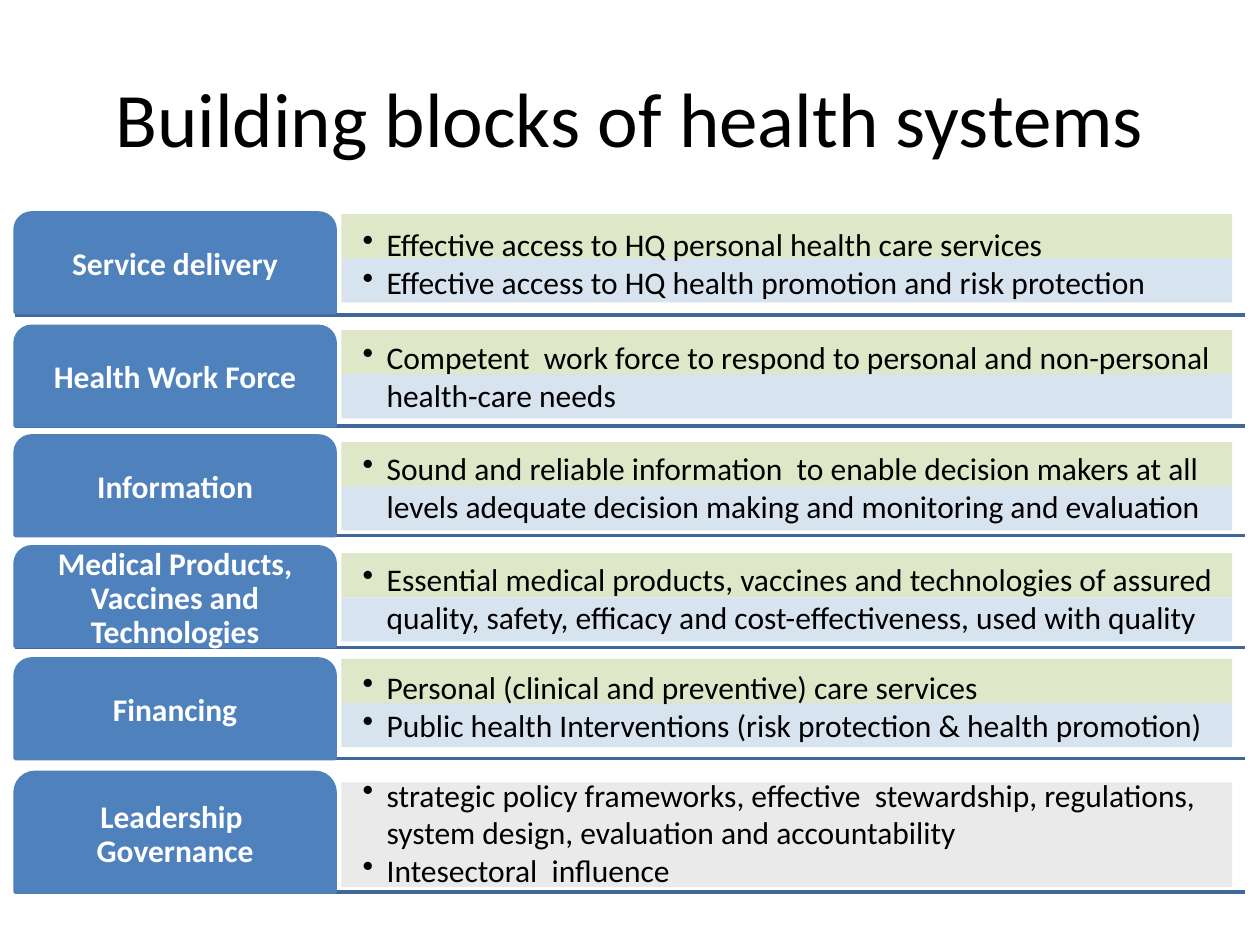
from dataclasses import dataclass

import pptx
import pptx.dml.color
import pptx.enum.shapes
import pptx.enum.text
import pptx.oxml.ns
import pptx.util
from lxml import etree

SHAPE = pptx.enum.shapes.MSO_SHAPE
ALIGN = pptx.enum.text.PP_ALIGN
COLS, ROWS = 1000, 750


@dataclass(frozen=True)
class Theme:
    font: str = "Calibri"
    title_size: int = 44
    body_size: int = 18
    ink: str = "000000"
    paper: str = "FFFFFF"
    tab: str = "4F81BD"
    rule: str = "3F6797"
    green: str = "C3D69B"
    blue: str = "B9CDE5"
    grey: str = "D9D9D9"
    alpha: int = 55
    line_width: int = 2


@dataclass(frozen=True)
class Box:
    col: float
    row: float
    cols: float
    rows: float


@dataclass(frozen=True)
class Block:
    label: str
    points: tuple[str, ...]
    tab_row: int
    band_row: int
    text_row: int
    rule_row: int
    tab_rows: int = 79
    band_rows: int = 35
    text_rows: int = 71
    text_cols: int = 701
    bands: tuple[str, ...] = (Theme.green, Theme.blue)


THEME = Theme()
BLOCKS = (
    Block("Service delivery",
          ("Effective access to HQ personal health care services",
           "Effective access to HQ health promotion and risk protection"),
          169, 170, 173, 250, text_cols=734),
    Block("Health Work Force",
          ("Competent  work force to respond to personal and non-personal "
           "health-care needs",),
          259, 262, 263, 338, text_cols=710),
    Block("Information",
          ("Sound and reliable information  to enable decision makers at all "
           "levels adequate decision making and monitoring and evaluation",),
          346, 351, 351, 425),
    Block("Medical Products, Vaccines and Technologies",
          ("Essential medical products, vaccines and technologies of assured "
           "quality, safety, efficacy and cost-effectiveness, used with quality",),
          434, 439, 439, 514),
    Block("Financing",
          ("Personal (clinical and preventive) care services",
           "Public health Interventions (risk protection & health promotion)"),
          523, 523, 525, 602),
    Block("Leadership  Governance",
          ("strategic policy frameworks, effective  stewardship, regulations,  "
           "system design, evaluation and accountability",
           "Intesectoral  influence"),
          613, 621, 610, 708, tab_rows=95, band_rows=83, text_rows=101,
          bands=(Theme.grey,)),
)


def rgb(value: str) -> pptx.dml.color.RGBColor:
    return pptx.dml.color.RGBColor.from_string(value)


def apply(target, values: dict) -> None:
    for name, value in values.items():
        setattr(target, name, value)


def place(prs, box: Box) -> tuple[int, int, int, int]:
    x, y = prs.slide_width / COLS, prs.slide_height / ROWS
    return (round(box.col * x), round(box.row * y),
            round(box.cols * x), round(box.rows * y))


def write(tf, lines: tuple[str, ...], size: int, color: str,
          bold: bool = False, **paragraph) -> None:
    apply(tf, {"word_wrap": True,
               "vertical_anchor": pptx.enum.text.MSO_ANCHOR.MIDDLE})
    for i, line in enumerate(lines):
        p = tf.add_paragraph() if i else tf.paragraphs[0]
        apply(p, paragraph)
        r = p.add_run()
        r.text = line
        apply(r.font, {"name": THEME.font, "size": pptx.util.Pt(size), "bold": bold})
        r.font.color.rgb = rgb(color)


def add_bullet(p) -> None:
    pPr = p._p.get_or_add_pPr()
    indent = pptx.util.Inches(0.19)
    pPr.set("marL", str(indent))
    pPr.set("indent", str(-indent))
    etree.SubElement(pPr, pptx.oxml.ns.qn("a:buChar")).set("char", "•")


def add_filled(prs, s, kind, box: Box, color: str):
    sp = s.shapes.add_shape(kind, *place(prs, box))
    sp.shadow.inherit = False
    sp.fill.solid()
    sp.fill.fore_color.rgb = rgb(color)
    return sp


def add_bands(prs, s, block: Block) -> None:
    for i, color in enumerate(block.bands):
        box = Box(271, block.band_row + i * block.band_rows, 707, block.band_rows)
        sp = add_filled(prs, s, SHAPE.RECTANGLE, box, color)
        sp.line.fill.background()
        clr = sp._element.spPr.find(".//" + pptx.oxml.ns.qn("a:srgbClr"))
        alpha = etree.SubElement(clr, pptx.oxml.ns.qn("a:alpha"))
        alpha.set("val", str(THEME.alpha * 1000))


def add_rule(prs, s, row: int) -> None:
    x, y, width, _ = place(prs, Box(12, row, 976, 0))
    cn = s.shapes.add_connector(pptx.enum.shapes.MSO_CONNECTOR.STRAIGHT,
                                x, y, x + width, y)
    cn.line.color.rgb = rgb(THEME.rule)
    cn.line.width = pptx.util.Pt(THEME.line_width)
    etree.SubElement(cn._element.spPr, pptx.oxml.ns.qn("a:effectLst"))


def add_tab(prs, s, block: Block) -> None:
    box = Box(12, block.tab_row, 254, block.tab_rows)
    sp = add_filled(prs, s, SHAPE.ROUND_2_SAME_RECTANGLE, box, THEME.tab)
    sp.line.color.rgb = rgb(THEME.tab)
    sp.line.width = pptx.util.Pt(THEME.line_width)
    margin = pptx.util.Inches(0.03)
    apply(sp.text_frame, {f"margin_{side}": margin
                          for side in ("left", "top", "right", "bottom")})
    write(sp.text_frame, (block.label,), THEME.body_size, THEME.paper, bold=True,
          alignment=ALIGN.CENTER, line_spacing=0.9)


def add_points(prs, s, block: Block) -> None:
    box = Box(278, block.text_row, block.text_cols, block.text_rows)
    tf = s.shapes.add_textbox(*place(prs, box)).text_frame
    write(tf, block.points, THEME.body_size, THEME.ink)
    for p in tf.paragraphs:
        add_bullet(p)


def main() -> None:
    prs = pptx.Presentation()
    apply(prs, {"slide_width": pptx.util.Inches(10),
                "slide_height": pptx.util.Inches(7.5)})
    s = prs.slides.add_slide(prs.slide_layouts[6])
    for block in BLOCKS:
        add_bands(prs, s, block)
    title = s.shapes.add_textbox(*place(prs, Box(50, 30, 900, 125)))
    write(title.text_frame, ("Building blocks of health systems",),
          THEME.title_size, THEME.ink, alignment=ALIGN.CENTER)
    for block in BLOCKS:
        add_rule(prs, s, block.rule_row)
        add_tab(prs, s, block)
        add_points(prs, s, block)
    prs.save("out.pptx")


if __name__ == "__main__":
    main()
